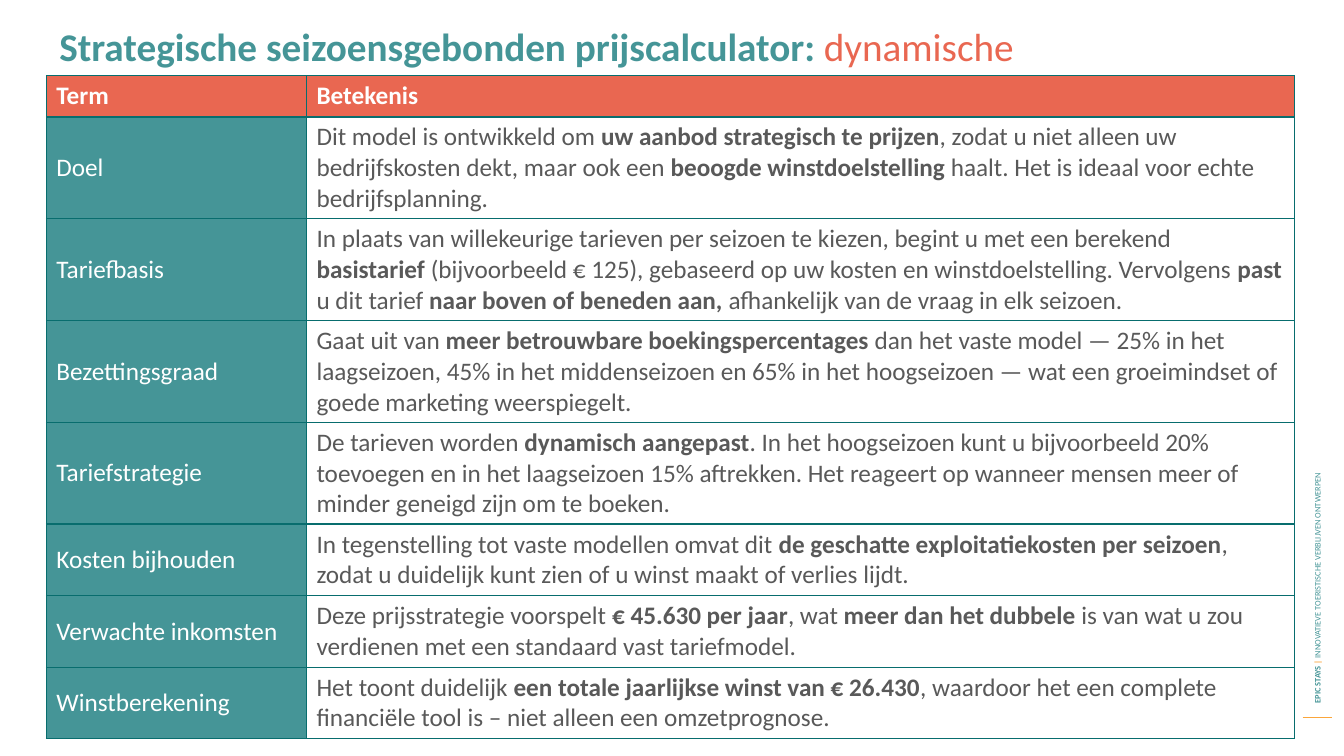
from lxml.etree import SubElement
from pptx import Presentation
from pptx.dml.color import RGBColor
from pptx.enum.shapes import MSO_CONNECTOR as Connector
from pptx.enum.text import MSO_ANCHOR as Anchor
from pptx.oxml.ns import qn
from pptx.util import Inches, Pt

TEAL = RGBColor(0x45, 0x95, 0x97)
DARK_TEAL = RGBColor(0x08, 0x6D, 0x6E)
CORAL = RGBColor(0xE9, 0x67, 0x51)
ORANGE = RGBColor(0xFB, 0xA6, 0x3B)
GREY = RGBColor(0x59, 0x59, 0x59)
WHITE = RGBColor(0xFF, 0xFF, 0xFF)

HEADINGS = ("Term", "Betekenis")
TERMS = [
    ("Doel",
     "Dit model is ontwikkeld om **uw aanbod strategisch te prijzen**, zodat u niet "
     "alleen uw bedrijfskosten dekt, maar ook een **beoogde winstdoelstelling **haalt. "
     "Het is ideaal voor echte bedrijfsplanning."),
    ("Tariefbasis",
     "In plaats van willekeurige tarieven per seizoen te kiezen, begint u met een "
     "berekend **basistarief **(bijvoorbeeld € 125), gebaseerd op uw kosten en "
     "winstdoelstelling. Vervolgens **past** u dit tarief **naar boven of beneden "
     "aan, **afhankelijk van de vraag in elk seizoen."),
    ("Bezettingsgraad",
     "Gaat uit van **meer betrouwbare boekingspercentages **dan het vaste model — 25% "
     "in het laagseizoen, 45% in het middenseizoen en 65% in het hoogseizoen — wat een "
     "groeimindset of goede marketing weerspiegelt."),
    ("Tariefstrategie",
     "De tarieven worden **dynamisch aangepast**. In het hoogseizoen kunt u bijvoorbeeld "
     "20% toevoegen en in het laagseizoen 15% aftrekken. Het reageert op wanneer mensen "
     "meer of minder geneigd zijn om te boeken."),
    ("Kosten bijhouden",
     "In tegenstelling tot vaste modellen omvat dit **de geschatte exploitatiekosten per "
     "seizoen**, zodat u duidelijk kunt zien of u winst maakt of verlies lijdt."),
    ("Verwachte inkomsten",
     "Deze prijsstrategie voorspelt **€ 45.630 per jaar**, wat **meer dan het dubbele **"
     "is van wat u zou verdienen met een standaard vast tariefmodel."),
    ("Winstberekening",
     "Het toont duidelijk **een totale jaarlijkse winst van € 26.430**, waardoor het een "
     "complete financiële tool is – niet alleen een omzetprognose."),
]


def write(paragraph, text, size=18, color=GREY, bold=False, font="Calibri"):
    """Add text to a paragraph, switching bold at each double asterisk."""
    for index, part in enumerate(text.split("**")):
        if part:
            run = paragraph.add_run()
            run.text = part
            run.font.name = font
            run.font.size = Pt(size)
            run.font.bold = bold != (index % 2 == 1)
            run.font.color.rgb = color


class SlideBuilder:
    """Hold the current slide and the table style."""

    def __init__(self, slide, border=DARK_TEAL, border_width=1):
        self.slide = slide
        self.border = border
        self.border_width = border_width

    def text(self, left, top, width, height, parts, size, rotation=0, anchor=Anchor.TOP):
        """Place a text box with (text, color, bold) parts."""
        box = self.slide.shapes.add_textbox(
            Inches(left), Inches(top), Inches(width), Inches(height))
        box.rotation = rotation
        frame = box.text_frame
        frame.word_wrap = True
        frame.vertical_anchor = anchor
        for content, color, bold in parts:
            write(frame.paragraphs[0], content, size=size, color=color, bold=bold)

    def rule(self, left, right, y, color, width):
        """Draw a horizontal line."""
        line = self.slide.shapes.add_connector(
            Connector.STRAIGHT, Inches(left), Inches(y), Inches(right), Inches(y))
        line.line.color.rgb = color
        line.line.width = Pt(width)
        SubElement(line._element.spPr, qn("a:effectLst"))

    def cell(self, cell, content, color, bold=False, fill=None):
        """Fill, border and write one table cell."""
        cell.vertical_anchor = Anchor.MIDDLE
        properties = cell._tc.get_or_add_tcPr()
        for side in ("lnL", "lnR", "lnT", "lnB"):
            edge = SubElement(properties, qn(f"a:{side}"), w=str(Pt(self.border_width)))
            paint = SubElement(edge, qn("a:solidFill"))
            SubElement(paint, qn("a:srgbClr"), val=str(self.border))
        if fill is None:
            cell.fill.background()
        else:
            cell.fill.solid()
            cell.fill.fore_color.rgb = fill
        write(cell.text_frame.paragraphs[0], content, color=color, bold=bold)

    def table(self, left, top, widths, heights, headings, rows):
        """Place a table with a heading row and a coloured term column."""
        table = self.slide.shapes.add_table(
            len(heights), len(widths), Inches(left), Inches(top),
            Inches(sum(widths)), Inches(sum(heights))).table
        for column, width in zip(table.columns, widths):
            column.width = Inches(width)
        for row, height in zip(table.rows, heights):
            row.height = Inches(height)
        for column, heading in enumerate(headings):
            self.cell(table.cell(0, column), heading, WHITE, bold=True, fill=CORAL)
        for row, (term, meaning) in enumerate(rows, start=1):
            self.cell(table.cell(row, 0), term, WHITE, fill=TEAL)
            self.cell(table.cell(row, 1), meaning, GREY)


def main():
    """Build and save the slide."""
    deck = Presentation()
    deck.slide_width, deck.slide_height = Inches(13.33), Inches(7.5)
    builder = SlideBuilder(deck.slides.add_slide(deck.slide_layouts[6]))
    builder.rule(12.92, 13.21, 7.12, ORANGE, 0.75)
    builder.text(10.18, 4.09, 5.77, 0.2, [
        ("EPIC STAYS ", TEAL, True),
        ("| ", ORANGE, True),
        ("INNOVATIEVE TOERISTISCHE VERBLIJVEN ONTWERPEN", TEAL, False),
    ], size=6, rotation=270, anchor=Anchor.MIDDLE)
    builder.text(0.49, 0.17, 11.61, 0.56, [
        ("Strategische seizoensgebonden prijscalculator: ", TEAL, True),
        ("dynamische", CORAL, False),
    ], size=28)
    builder.table(0.46, 0.75, [2.58, 9.8], [0.41] + [1.01] * 4 + [0.71] * 3,
                  HEADINGS, TERMS)
    deck.save("out.pptx")


if __name__ == "__main__":
    main()
